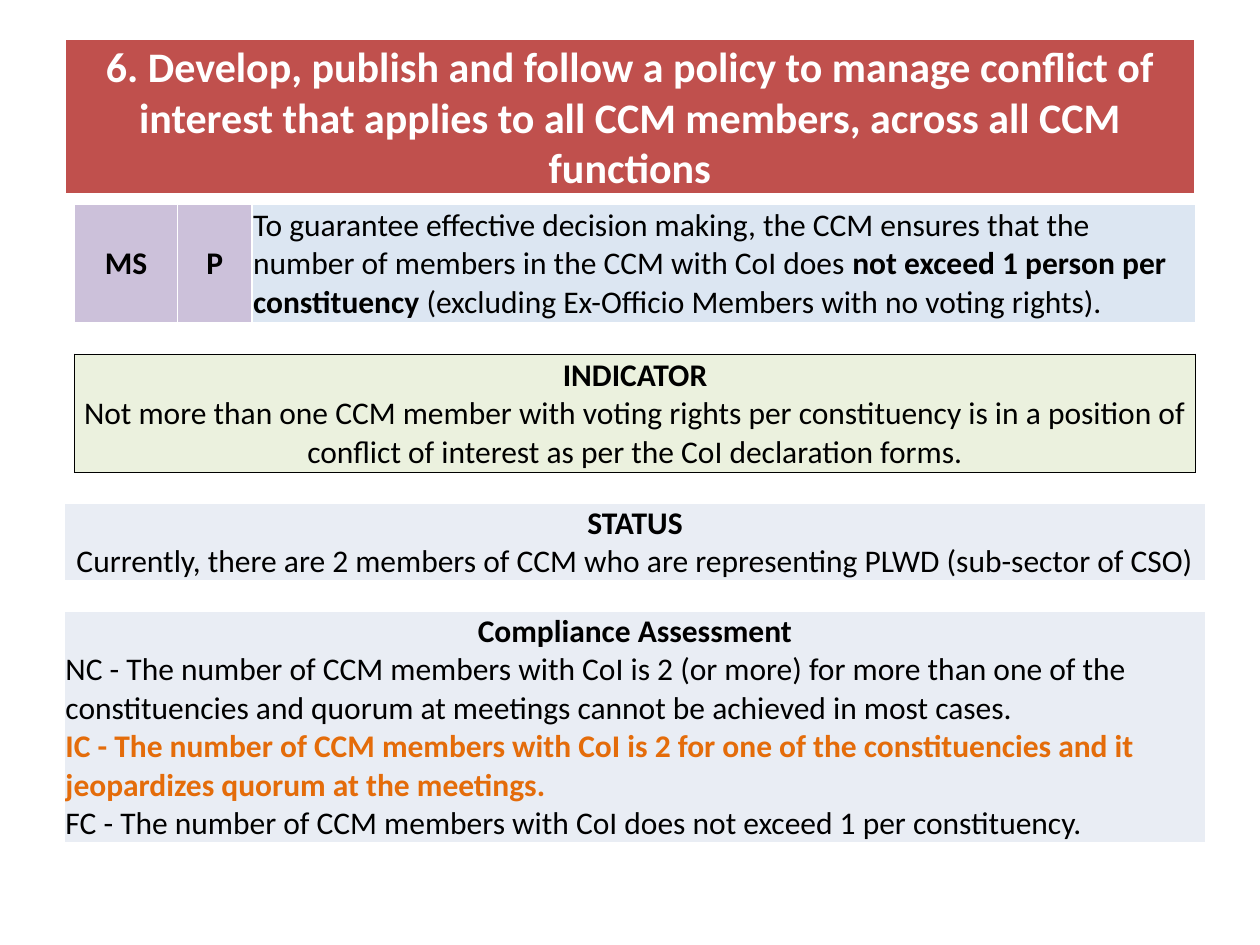
import pptx
import pptx.util
import pptx.dml.color
import pptx.enum.text
import pptx.oxml
import pptx.oxml.ns

In, Pt = pptx.util.Inches, pptx.util.Pt
ALIGN, ANCHOR = pptx.enum.text.PP_ALIGN, pptx.enum.text.MSO_ANCHOR
COLORS = {
    "white": "FFFFFF", "black": "000000", "red": "C0504D", "purple": "CCC1DA",
    "blue": "DCE6F2", "green": "EBF1DE", "gray": "E9EDF4", "orange": "E46C0A",
}
LEFT, WIDTH = 0.51, 9.06
INNER_LEFT, INNER_WIDTH = 0.59, 8.9


def rgb(name):
    return pptx.dml.color.RGBColor.from_string(COLORS[name])


def set_attrs(obj, **values):
    for name, value in values.items():
        setattr(obj, name, value)


def write(p, runs, align=ALIGN.CENTER, size=18):
    """Fill a paragraph with (text, bold, colour) runs."""
    p.alignment = align
    for text, bold, color in runs:
        r = p.add_run()
        r.text = text
        set_attrs(r.font, name="Calibri", size=Pt(size), bold=bold)
        r.font.color.rgb = rgb(color)


def set_borders(cell, color, width):
    tc_pr = cell._tc.get_or_add_tcPr()
    for i, side in enumerate("LRTB"):
        tc_pr.insert(i, pptx.oxml.parse_xml(
            f'<a:ln{side} {pptx.oxml.ns.nsdecls("a")} w="{Pt(width)}"><a:solidFill>'
            f'<a:srgbClr val="{COLORS[color]}"/></a:solidFill></a:ln{side}>'))


def add_title(s, box, text):
    sp = s.shapes.title
    set_attrs(sp, **dict(zip(("left", "top", "width", "height"), map(In, box))))
    sp.fill.solid()
    sp.fill.fore_color.rgb = rgb("red")
    sp.line.color.rgb = rgb("white")
    sp.line.width = Pt(2)
    tf = sp.text_frame
    set_attrs(tf, word_wrap=True, vertical_anchor=ANCHOR.MIDDLE,
              auto_size=pptx.enum.text.MSO_AUTO_SIZE.NONE)
    write(tf.paragraphs[0], [(text, True, "white")], size=24)


def add_band(s, box, cells, border=("white", 1)):
    """Add a one-row table; cells are (width, fill, [(alignment, runs)])."""
    table = s.shapes.add_table(1, len(cells), *map(In, box)).table
    set_attrs(table, first_row=False, horz_banding=False)
    for col, cell, (width, fill, paragraphs) in zip(table.columns, table.rows[0].cells, cells):
        col.width = In(width)
        set_attrs(cell, vertical_anchor=ANCHOR.MIDDLE, margin_left=In(0.01),
                  margin_right=In(0.01), margin_top=In(0.01), margin_bottom=0)
        cell.fill.solid()
        cell.fill.fore_color.rgb = rgb(fill)
        set_borders(cell, *border)
        tf = cell.text_frame
        for i, (align, runs) in enumerate(paragraphs):
            write(tf.add_paragraph() if i else tf.paragraphs[0], runs, align)


def heading(text):
    return ALIGN.CENTER, [(text, True, "black")]


def body(text, align=ALIGN.LEFT, bold=False, color="black"):
    return align, [(text, bold, color)]


def add_requirement(s, box):
    statement = [
        ("To guarantee effective decision making, the CCM ensures that the number of "
         "members in the CCM with CoI does ", False, "black"),
        ("not exceed 1 person per constituency ", True, "black"),
        ("(excluding Ex-Officio Members with no voting rights).", False, "black"),
    ]
    add_band(s, box, [(0.82, "purple", [heading("MS")]),
                      (0.59, "purple", [heading("P")]),
                      (box[2] - 0.82 - 0.59, "blue", [(ALIGN.LEFT, statement)])])


def add_indicator(s, box):
    add_band(s, box, [(box[2], "green", [
        heading("INDICATOR"),
        body("Not more than one CCM member with voting rights per constituency is in a "
             "position of conflict of interest as per the CoI declaration forms.",
             ALIGN.CENTER)])], border=("black", 0.5))


def add_status(s, box):
    add_band(s, box, [(box[2], "gray", [
        heading("STATUS"),
        body("Currently, there are 2 members of CCM who are representing PLWD "
             "(sub-sector of CSO)", ALIGN.CENTER)])])


def add_assessment(s, box):
    add_band(s, box, [(box[2], "gray", [
        heading("Compliance Assessment"),
        body("NC - The number of CCM members with CoI is 2 (or more) for more than one of "
             "the constituencies and quorum at meetings cannot be achieved in most cases."),
        body("IC - The number of CCM members with CoI is 2 for one of the constituencies "
             "and it jeopardizes quorum at the meetings.", bold=True, color="orange"),
        body("FC - The number of CCM members with CoI does not exceed 1 per "
             "constituency.")])])


def main():
    prs = pptx.Presentation()
    set_attrs(prs, slide_width=In(10), slide_height=In(7.5))
    s = prs.slides.add_slide(prs.slide_layouts.get_by_name("Title Only"))
    add_title(s, (LEFT, 0.3, 8.98, 1.25),
              "6. Develop, publish and follow a policy to manage conflict of interest "
              "that applies to all CCM members, across all CCM functions")
    add_requirement(s, (INNER_LEFT, 1.62, INNER_WIDTH, 0.94))
    add_indicator(s, (INNER_LEFT, 2.81, INNER_WIDTH, 0.94))
    add_status(s, (LEFT, 3.99, WIDTH, 0.62))
    add_assessment(s, (LEFT, 4.85, WIDTH, 1.81))
    prs.save("out.pptx")


if __name__ == "__main__":
    main()
